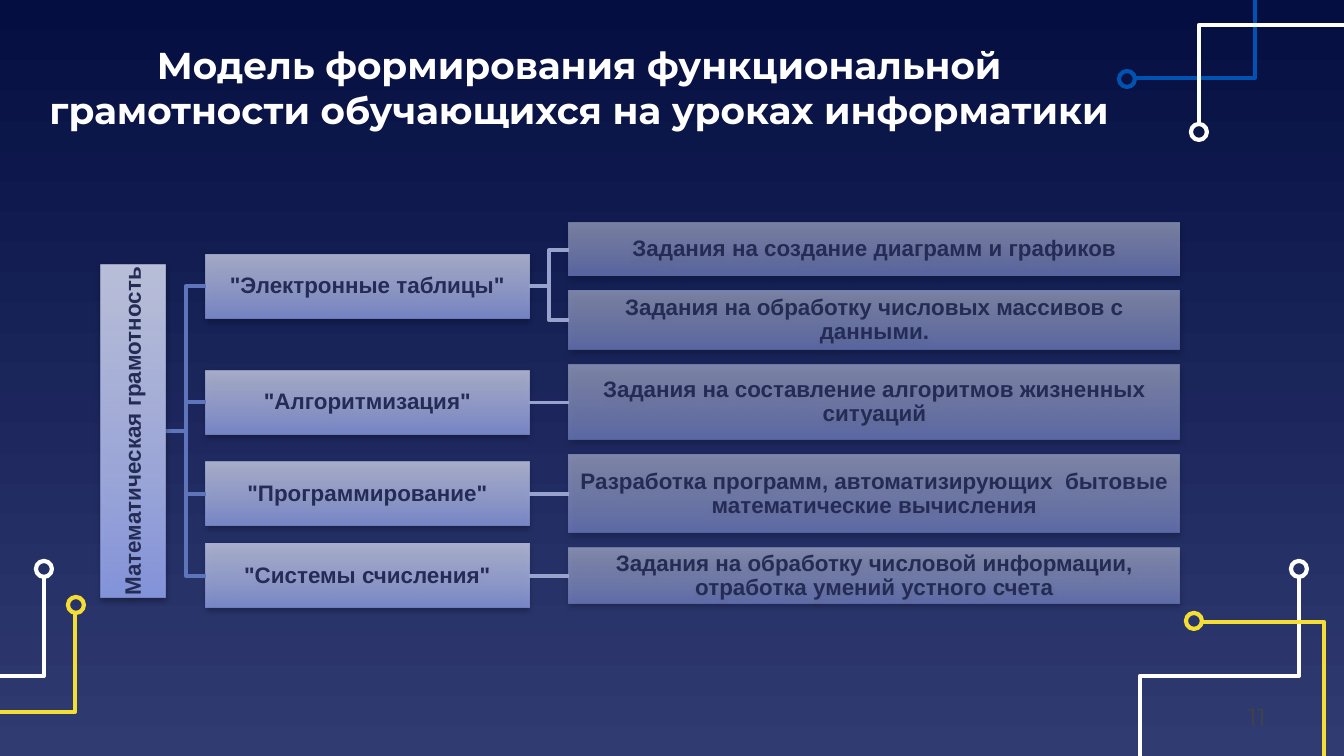
from lxml import etree
from pptx import Presentation
from pptx.dml.color import RGBColor
from pptx.enum.shapes import MSO_CONNECTOR, MSO_SHAPE
from pptx.enum.text import MSO_ANCHOR, MSO_AUTO_SIZE, PP_ALIGN
from pptx.oxml import parse_xml
from pptx.oxml.ns import qn
from pptx.util import Pt

PX = 914400 / 134.4
NS = 'xmlns:a="http://schemas.openxmlformats.org/drawingml/2006/main"'
RECT, OVAL = MSO_SHAPE.RECTANGLE, MSO_SHAPE.OVAL
STRAIGHT = MSO_CONNECTOR.STRAIGHT
MIDDLE, CENTER = MSO_ANCHOR.MIDDLE, PP_ALIGN.CENTER
FIXED = MSO_AUTO_SIZE.NONE
WHITE, BLUE, YELLOW = "FFFFFF", "0152B1", "F5DE34"
INK, TRUNK, TWIG = "242C56", "5E75BB", "97A2CD"
STOPS = ((0, "9DAFFC"), (35, "BBC7FC"), (100, "E4E9FF"))
GAP, TOP, TALL = 15, 223, 64
ROOT, STEM, LEAF = (101, 65), (206, 323), (569, 611)

TRACES = [
    (WHITE, (1299, 569), [(1299, 576), (1299, 676), (1140, 676), (1140, 756)]),
    (BLUE, (1127, 79), [(1136, 78), (1255, 78), (1255, 0)]),
    (WHITE, (1199, 132), [(1199, 124), (1199, 25), (1344, 25)]),
    (YELLOW, (1194, 621), [(1202, 622), (1324, 622), (1324, 756)]),
    (WHITE, (44, 569), [(44, 576), (44, 676), (0, 676)]),
    (YELLOW, (76, 605), [(75, 612), (75, 712), (0, 712)]),
]
TREE = [
    ('"Электронные таблицы"', [
        ("Задания на создание диаграмм и графиков", 53),
        ("Задания на обработку числовых массивов с данными.", 59)]),
    ('"Алгоритмизация"', [
        ("Задания на составление алгоритмов жизненных ситуаций", 75)]),
    ('"Программирование"', [
        ("Разработка программ, автоматизирующих  бытовые "
         "математические вычисления", 78)]),
    ('"Системы счисления"', [
        ("Задания на обработку числовой информации, "
         "отработка умений устного счета", 56)]),
]


def px(*vals):
    return [round(v * PX) for v in vals]


def rgb(code):
    return RGBColor.from_string(code)


class Deck:
    """Holds the style and the slide being drawn."""

    def __init__(self):
        self.prs = Presentation()
        self.prs.slide_width, self.prs.slide_height = px(1344, 756)
        self.slide = self.prs.slides.add_slide(self.prs.slide_layouts[5])
        self.shapes = self.slide.shapes

    def backdrop(self, *codes):
        fill = self.slide.background.fill
        fill.gradient()
        fill.gradient_angle = 270
        for stop, code in zip(fill.gradient_stops, codes):
            stop.color.rgb = rgb(code)

    def letter(self, frame, text, size, font, code, bold=True):
        frame.text = text
        frame.word_wrap = True
        frame.auto_size = FIXED
        frame.vertical_anchor = MIDDLE
        para = frame.paragraphs[0]
        para.alignment = CENTER
        for run in para.runs:
            run.font.size, run.font.name, run.font.bold = Pt(size), font, bold
            run.font.color.rgb = rgb(code)
        return para

    def title(self, text, *area):
        head = self.shapes.title
        head.left, head.top, head.width, head.height = px(*area)
        self.letter(head.text_frame, text, 20, "Montserrat", WHITE)

    def label(self, text, *area):
        note = self.shapes.add_textbox(*px(*area))
        self.letter(note.text_frame, text, 13, "Montserrat", "434343", False)

    def stroke(self, shape, code, width):
        shape.fill.background()
        shape.line.color.rgb = rgb(code)
        shape.line.width = Pt(width)
        shape.shadow.inherit = False

    def wire(self, points, code, width):
        pen = self.shapes.build_freeform(*points[0], scale=PX)
        pen.add_line_segments(points[1:], close=False)
        self.stroke(pen.convert_to_shape(), code, width)

    def ring(self, x, y, code):
        dot = self.shapes.add_shape(OVAL, *px(x - 8, y - 8, 16, 16))
        self.stroke(dot, code, 2.25)

    def link(self, x1, y1, x2, y2, code):
        if y1 != y2:
            mid = (x1 + x2) / 2
            self.wire([(x1, y1), (mid, y1), (mid, y2), (x2, y2)], code, 2)
            return
        line = self.shapes.add_connector(STRAIGHT, *px(x1, y1, x2, y2))
        line.line.color.rgb = rgb(code)
        line.line.width = Pt(2)
        etree.SubElement(line._element.spPr, qn("a:effectLst"))

    def box(self, text, x, y, wide, tall, alpha, turn=0):
        box = self.shapes.add_shape(RECT, *px(x, y, wide, tall))
        box.rotation = turn
        box.fill.background()
        box.line.fill.background()
        box.shadow.inherit = False
        stops = "".join(
            f'<a:gs pos="{pos * 1000}"><a:srgbClr val="{code}">'
            f'<a:alpha val="{alpha * 1000}"/></a:srgbClr></a:gs>'
            for pos, code in STOPS)
        prop = box._element.spPr
        prop.replace(prop.find(qn("a:noFill")), parse_xml(
            f'<a:gradFill {NS} rotWithShape="0"><a:gsLst>{stops}</a:gsLst>'
            '<a:lin ang="16200000" scaled="0"/></a:gradFill>'))
        prop.find(qn("a:effectLst")).append(parse_xml(
            f'<a:outerShdw {NS} blurRad="40000" dist="20000" dir="5400000" '
            'rotWithShape="0"><a:srgbClr val="000000"><a:alpha val="38000"/>'
            '</a:srgbClr></a:outerShdw>'))
        frame = box.text_frame
        frame.margin_left = frame.margin_right = px(1)[0]
        frame.margin_top = frame.margin_bottom = px(1)[0]
        self.letter(frame, text, 12, "Arial", INK).line_spacing = 0.9

    def tree(self, name, limbs):
        y, mids = TOP, []
        for limb, leaves in limbs:
            spots = []
            for text, tall in leaves:
                self.box(text, LEAF[0], y, LEAF[1], tall, 50)
                spots.append(y + tall / 2)
                y += tall + GAP
            first = spots[0] - leaves[0][1] / 2
            mid = (first + y - GAP) / 2
            mids.append(mid)
            self.box(limb, STEM[0], mid - TALL / 2, STEM[1], TALL, 70)
            for spot in spots:
                self.link(sum(STEM), mid, LEAF[0], spot, TWIG)
        core = (mids[0] + mids[-1]) / 2
        for mid in mids:
            self.link(sum(ROOT), core, STEM[0], mid, TRUNK)
        long, wide = 333, ROOT[1]
        left = ROOT[0] + (wide - long) / 2
        self.box(name, left, core - wide / 2, long, wide, 80, 270)


def main():
    deck = Deck()
    deck.backdrop("040E41", "303B72")
    for code, spot, points in TRACES:
        deck.wire(points, code, 2.25)
        deck.ring(*spot, code)
    deck.title("Модель формирования функциональной грамотности "
               "обучающихся на уроках информатики", 13, 52, 1133, 70)
    deck.tree("Математическая грамотность", TREE)
    deck.label("11", 1217, 697, 80, 40)
    deck.prs.save("out.pptx")


if __name__ == "__main__":
    main()
